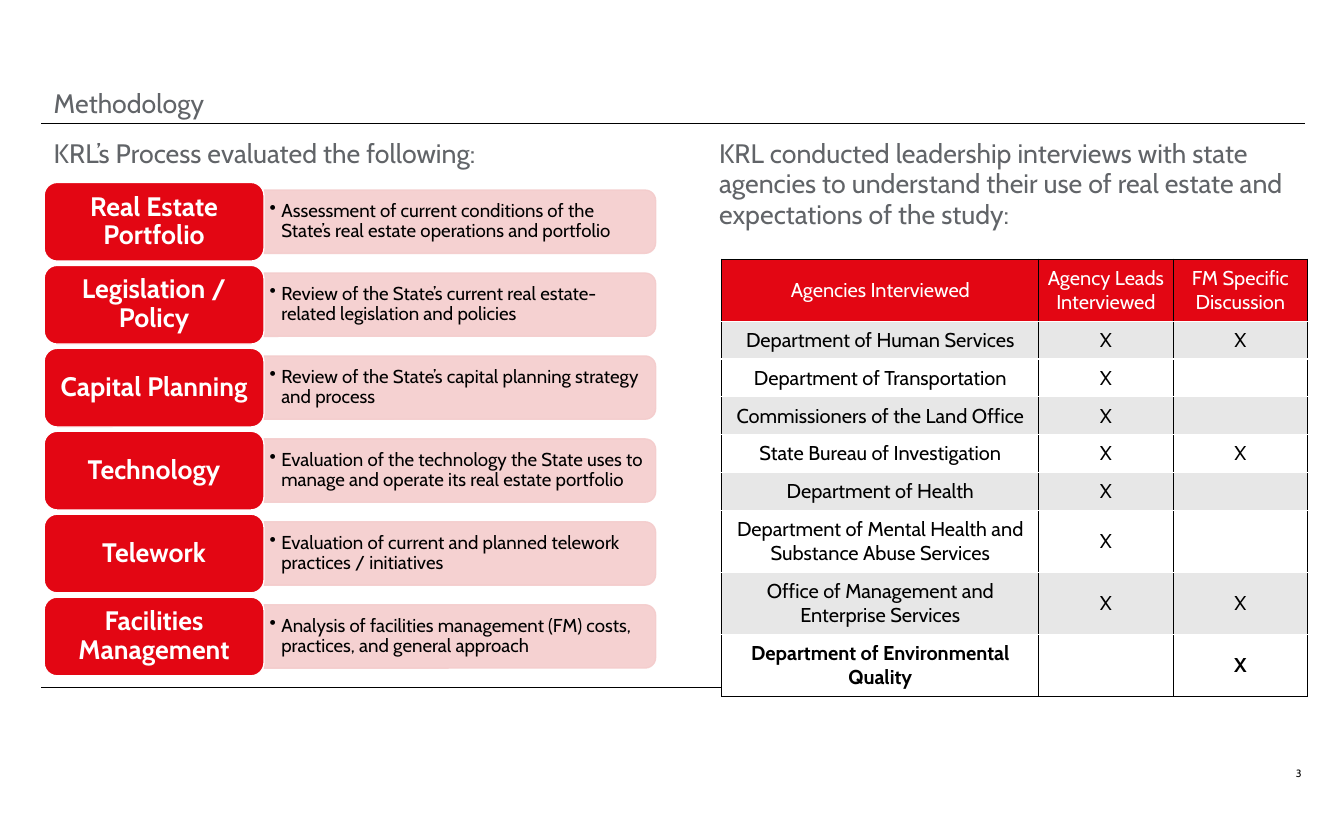
import pptx
import pptx.dml.color
import pptx.enum.shapes
import pptx.enum.text
import pptx.oxml
import pptx.oxml.ns
import pptx.util
from lxml import etree

Inches = pptx.util.Inches
Shape = pptx.enum.shapes.MSO_SHAPE
Align = pptx.enum.text.PP_ALIGN
Anchor = pptx.enum.text.MSO_ANCHOR
qn = pptx.oxml.ns.qn

COLORS = {
    "red": "E30613",
    "pink": "F4CCCC",
    "grey": "616468",
    "band": "E7E7E7",
    "white": "FFFFFF",
    "black": "000000",
}

TOPICS = [
    ("Real Estate Portfolio",
     "Assessment of current conditions of the State’s real estate operations and portfolio"),
    ("Legislation / Policy",
     "Review of the State’s current real estate-related legislation and policies"),
    ("Capital Planning",
     "Review of the State’s capital planning strategy and process"),
    ("Technology",
     "Evaluation of the technology the State uses to manage and operate its real estate portfolio"),
    ("Telework",
     "Evaluation of current and planned telework practices / initiatives"),
    ("Facilities Management",
     "Analysis of facilities management (FM) costs, practices, and general approach"),
]

INTERVIEWS = [
    ("Agencies Interviewed", "Agency Leads Interviewed", "FM Specific Discussion"),
    ("Department of Human Services", "X", "X"),
    ("Department of Transportation", "X", ""),
    ("Commissioners of the Land Office", "X", ""),
    ("State Bureau of Investigation", "X", "X"),
    ("Department of Health", "X", ""),
    ("Department of Mental Health and Substance Abuse Services", "X", ""),
    ("Office of Management and Enterprise Services", "X", "X"),
    ("Department of Environmental Quality", "", "X"),
]


def rgb(name):
    return pptx.dml.color.RGBColor.from_string(COLORS[name])


class SlideBuilder:
    def __init__(self, slide, font="Cabin"):
        self.slide = slide
        self.font = font

    def set_text(self, frame, text, size, color, bold=False, align=Align.LEFT,
                 anchor=Anchor.TOP, spacing=1.0, insets=(0.1, 0.05), bullet=False):
        frame.text = text
        frame.word_wrap = True
        frame.auto_size = pptx.enum.text.MSO_AUTO_SIZE.NONE
        frame.vertical_anchor = anchor
        frame.margin_left = frame.margin_right = Inches(insets[0])
        frame.margin_top = frame.margin_bottom = Inches(insets[1])
        paragraph = frame.paragraphs[0]
        paragraph.line_spacing = spacing
        paragraph.space_before = pptx.util.Pt(0)
        paragraph.alignment = align
        properties = paragraph._p.get_or_add_pPr()
        indent = Inches(0.12) if bullet else 0
        properties.set("marL", str(indent))
        properties.set("indent", str(-indent))
        if bullet:
            etree.SubElement(properties, qn("a:buChar")).set("char", "•")
        else:
            etree.SubElement(properties, qn("a:buNone"))
        self.style_runs(paragraph, size, color, bold)

    def style_runs(self, paragraph, size, color, bold):
        for run in paragraph.runs:
            run.font.name = self.font
            run.font.size = pptx.util.Pt(size)
            run.font.bold = bold
            run.font.color.rgb = rgb(color)

    def heading(self, placeholder, text, left, top, width, height):
        placeholder.left, placeholder.top = Inches(left), Inches(top)
        placeholder.width, placeholder.height = Inches(width), Inches(height)
        self.set_text(placeholder.text_frame, text, 20, "grey", spacing=0.95)

    def text_box(self, text, left, top, width, height, size, **style):
        box = self.slide.shapes.add_textbox(
            Inches(left), Inches(top), Inches(width), Inches(height))
        self.set_text(box.text_frame, text, size, "black", **style)

    def rule(self, left, right, y):
        line = self.slide.shapes.add_connector(
            pptx.enum.shapes.MSO_CONNECTOR.STRAIGHT,
            Inches(left), Inches(y), Inches(right), Inches(y))
        line.line.color.rgb = rgb("black")
        line.line.width = pptx.util.Pt(0.5)
        etree.SubElement(line._element.spPr, qn("a:effectLst"))

    def block(self, kind, left, top, width, height, fill, outline, opacity=100):
        shape = self.slide.shapes.add_shape(
            kind, Inches(left), Inches(top), Inches(width), Inches(height))
        shape.shadow.inherit = False
        shape.fill.solid()
        shape.fill.fore_color.rgb = rgb(fill)
        shape.line.color.rgb = rgb(outline)
        shape.line.width = pptx.util.Pt(1)
        if opacity < 100:
            for color in shape._element.spPr.iter(qn("a:srgbClr")):
                etree.SubElement(color, qn("a:alpha")).set("val", str(opacity * 1000))
        return shape

    def topic(self, label, detail, top):
        label_left, label_width, label_height = 0.46, 2.29, 0.82
        bar_left, bar_length, bar_depth = label_left + label_width, 4.08, 0.66
        middle = top + label_height / 2
        # The bar is turned so that its rounded end faces right
        bar = self.block(Shape.ROUND_2_SAME_RECTANGLE,
                         bar_left + (bar_length - bar_depth) / 2, middle - bar_length / 2,
                         bar_depth, bar_length, "pink", "pink", opacity=90)
        bar.rotation = 90
        self.text_box(detail, bar_left, middle - 0.3, 4.05, 0.6, 14, anchor=Anchor.MIDDLE,
                      spacing=0.9, insets=(0.06, 0.03), bullet=True)
        tile = self.block(Shape.ROUNDED_RECTANGLE, label_left, top,
                          label_width, label_height, "red", "white")
        self.set_text(tile.text_frame, label, 20, "white", bold=True, align=Align.CENTER,
                      anchor=Anchor.MIDDLE, spacing=0.9, insets=(0.12, 0.08))

    def borders(self, cell, sides):
        properties = cell._tc.get_or_add_tcPr()
        for index, side in enumerate(sides):
            line = etree.Element(qn(f"a:ln{side}"), w="12700")
            fill = etree.SubElement(line, qn("a:solidFill"))
            etree.SubElement(fill, qn("a:srgbClr"), val=COLORS["black"])
            properties.insert(index, line)

    def table(self, rows, left, top, height, widths, row_height):
        frame = self.slide.shapes.add_table(
            len(rows), len(widths), Inches(left), Inches(top),
            Inches(sum(widths)), Inches(height))
        table = frame.table
        for column, width in zip(table.columns, widths):
            column.width = Inches(width)
        last = len(rows) - 1
        for r, row in enumerate(rows):
            table.rows[r].height = Inches(row_height)
            fill = "red" if r == 0 else "band" if r % 2 else "white"
            sides = "LR" + ("T" if r == 0 else "B" if r == last else "")
            for c, text in enumerate(row):
                cell = table.cell(r, c)
                cell.text = text
                cell.vertical_anchor = Anchor.MIDDLE
                cell.margin_left = cell.margin_right = Inches(0.07)
                cell.margin_top = cell.margin_bottom = Inches(0.07)
                cell.fill.solid()
                cell.fill.fore_color.rgb = rgb(fill)
                self.borders(cell, sides)
                paragraph = cell.text_frame.paragraphs[0]
                paragraph.alignment = Align.CENTER
                paragraph.font.size = pptx.util.Pt(15)
                self.style_runs(paragraph, 15, "black" if r else "white", r == last)
        frame.height = Inches(height)


def main():
    deck = pptx.Presentation()
    deck.slide_width, deck.slide_height = Inches(14), Inches(8.5)
    slide = deck.slides.add_slide(deck.slide_layouts.get_by_name("Two Content"))
    builder = SlideBuilder(slide)

    # Rules and page number
    for y in (1.29, 7.16):
        builder.rule(0.43, 13.59, y)
    builder.text_box("3", 11.63, 7.99, 1.93, 0.21, 7.9, align=Align.RIGHT, insets=(0, 0))

    # Title and the two column headings
    title, process, interviews = slide.placeholders
    builder.heading(title, "Methodology", 0.46, 0.88, 4.11, 0.36)
    builder.heading(process, "KRL’s Process evaluated the following:", 0.46, 1.4, 6.24, 1.29)
    builder.heading(interviews, "KRL conducted leadership interviews with state agencies to "
                    "understand their use of real estate and expectations of the study:",
                    7.39, 1.4, 6.23, 1.29)

    # Evaluated topics
    for index, (label, detail) in enumerate(TOPICS):
        builder.topic(label, detail, 1.9 + index * 4.32 / 5)

    # Interviewed agencies; rows grow to fit their text
    builder.table(INTERVIEWS, 7.52, 2.7, 4.22, (3.3, 1.4, 1.4), 0.31)

    deck.save("out.pptx")


if __name__ == "__main__":
    main()
